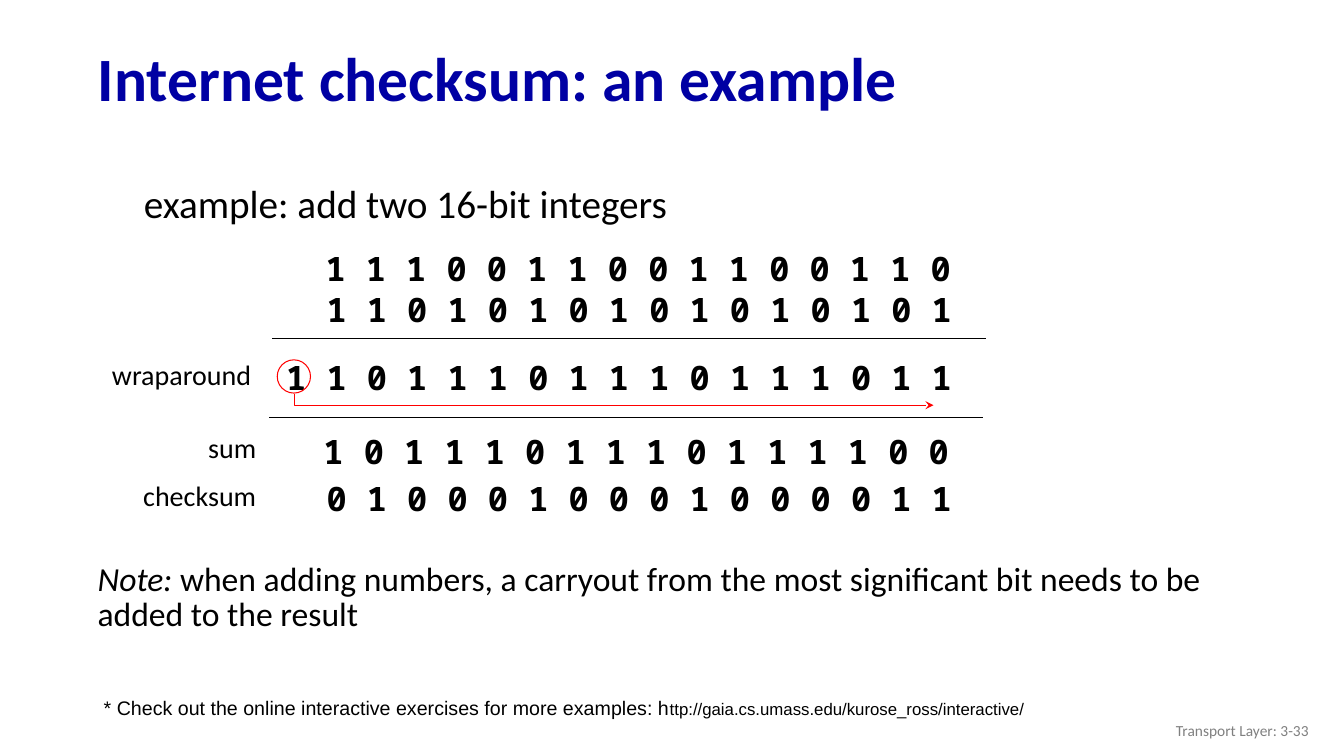
"""Build the Internet checksum example slide."""
from lxml.etree import SubElement
from pptx import Presentation
from pptx.dml.color import RGBColor
from pptx.enum.shapes import MSO_CONNECTOR, MSO_SHAPE
from pptx.enum.text import MSO_ANCHOR, PP_ALIGN
from pptx.oxml.ns import qn
from pptx.util import Inches, Pt

TITLE = "Internet checksum: an example"
BLACK, BLUE, RED, GRAY = "000000", "0000A3", "FF0000", "808080"
BODY = {"name": "Calibri", "size": Pt(28)}
LABEL = {"name": "Calibri", "size": Pt(20)}
BITS = {"name": "Noto Sans Mono", "size": Pt(24), "bold": True}
NOTE = {"name": "Calibri", "size": Pt(24)}
FOOT = {"name": "Arial", "size": Pt(14)}
PAGE = {"name": "Calibri", "size": Pt(11)}

BIT_ROWS = [
    (3.13, 2.41, "1 1 1 0 0 1 1 0 0 1 1 0 0 1 1 0"),
    (3.14, 2.82, "1 1 0 1 0 1 0 1 0 1 0 1 0 1 0 1"),
    (2.74, 3.49, "1 1 0 1 1 1 0 1 1 1 0 1 1 1 0 1 1"),
    (3.11, 4.23, "1 0 1 1 1 0 1 1 1 0 1 1 1 1 0 0"),
    (3.14, 4.69, "0 1 0 0 0 1 0 0 0 1 0 0 0 0 1 1"),
]
LABELS = [(2.59, 3.5, "wraparound"), (2.64, 4.22, "sum"), (2.64, 4.7, "checksum")]
RULES = [(2.7, 3.36), (2.67, 4.14)]
RULE_WIDTH = 7.08
LABEL_WIDTH = 1.64
CARRY_PATH = [(2.92, 3.91), (2.92, 4.02), (9.26, 4.02)]
TEXTS = [
    ((1.33, 1.59, 8.5, 0.8), [("example: add two 16-bit integers", BODY)],
     {"line_spacing": 1.3}),
    ((0.87, 5.55, 11.34, 1.18),
     [("Note:", NOTE | {"italic": True}),
      (" when adding numbers, a carryout from the most significant bit "
       "needs to be added to the result", NOTE)],
     {"line_spacing": 0.85}),
    ((0.93, 6.85, 10.78, 0.34),
     [("* Check out the online interactive exercises for more examples: h", FOOT),
      ("ttp://gaia.cs.umass.edu/kurose_ross/interactive/", FOOT | {"size": Pt(12)})],
     {}),
]


def rgb(color):
    return RGBColor.from_string(color)


def apply(target, values):
    for name, value in values.items():
        setattr(target, name, value)


def write(tf, runs, color=BLACK, **paragraph):
    p = tf.paragraphs[0]
    apply(p, paragraph)
    for text, font in runs:
        r = p.add_run()
        r.text = text
        apply(r.font, font)
        r.font.color.rgb = rgb(color)


def add_text(s, box, runs, color=BLACK, wrap=True, anchor=MSO_ANCHOR.TOP, **paragraph):
    tf = s.shapes.add_textbox(*map(Inches, box)).text_frame
    apply(tf, {"word_wrap": wrap, "vertical_anchor": anchor})
    write(tf, runs, color, **paragraph)


def outline(sp, color, width):
    sp.line.color.rgb = rgb(color)
    sp.line.width = Pt(width)


def add_rule(s, left, top):
    sp = s.shapes.add_connector(
        MSO_CONNECTOR.STRAIGHT, *map(Inches, (left, top, left + RULE_WIDTH, top)))
    outline(sp, BLACK, 1)
    SubElement(sp.element.spPr, qn("a:effectLst"))


def add_carry(s):
    circle = s.shapes.add_shape(MSO_SHAPE.OVAL, *map(Inches, (2.75, 3.57, 0.33, 0.33)))
    points = [(Inches(x), Inches(y)) for x, y in CARRY_PATH]
    builder = s.shapes.build_freeform(*points[0])
    builder.add_line_segments(points[1:], close=False)
    arrow = builder.convert_to_shape()
    for sp in (circle, arrow):
        sp.fill.background()
        outline(sp, RED, 0.75)
        sp.shadow.inherit = False
    SubElement(arrow.line._get_or_add_ln(), qn("a:tailEnd"), type="stealth")


def main():
    prs = Presentation()
    prs.slide_width, prs.slide_height = Inches(13.33), Inches(7.5)
    s = prs.slides.add_slide(prs.slide_layouts[5])
    title = s.shapes.title
    apply(title, dict(zip(("left", "top", "width", "height"),
                          map(Inches, (0.87, 0.32, 12.14, 0.98)))))
    title.text_frame.vertical_anchor = MSO_ANCHOR.MIDDLE
    write(title.text_frame, [(TITLE, BODY | {"size": Pt(44), "bold": True})], BLUE,
          alignment=PP_ALIGN.LEFT, line_spacing=0.9)

    for box, runs, paragraph in TEXTS:
        add_text(s, box, runs, **paragraph)
    for left, top, bits in BIT_ROWS:
        add_text(s, (left, top, 6.85 if len(bits) > 31 else 6.45, 0.5),
                 [(bits, BITS)], wrap=False)
    for right, top, label in LABELS:
        add_text(s, (right - LABEL_WIDTH, top, LABEL_WIDTH, 0.44), [(label, LABEL)],
                 alignment=PP_ALIGN.RIGHT)
    for left, top in RULES:
        add_rule(s, left, top)
    add_carry(s)
    add_text(s, (10.08, 7.05, 3, 0.4), [("Transport Layer: 3-33", PAGE)], GRAY,
             anchor=MSO_ANCHOR.MIDDLE, alignment=PP_ALIGN.RIGHT)
    prs.save("out.pptx")


if __name__ == "__main__":
    main()
